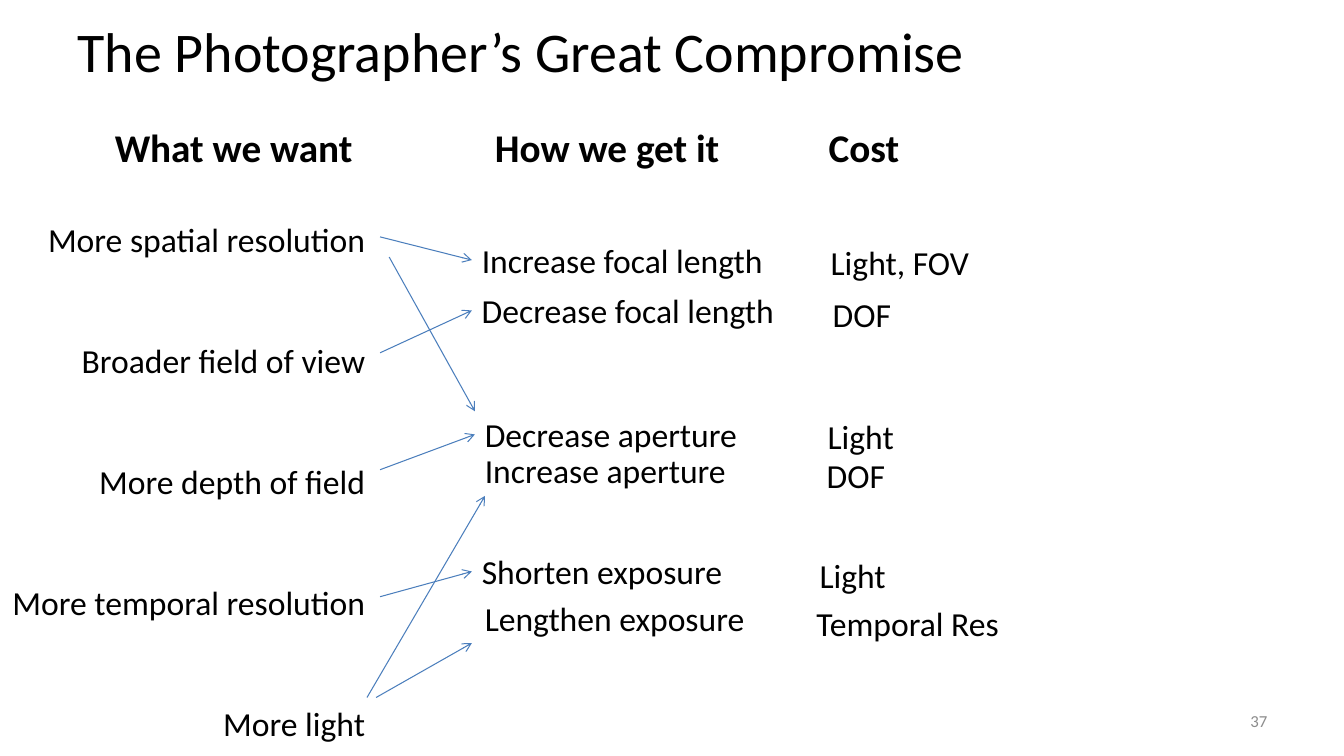
from dataclasses import dataclass

from lxml import etree
from pptx import Presentation
from pptx.dml.color import RGBColor
from pptx.enum import shapes, text
from pptx.oxml import ns
from pptx.util import Inches, Pt


@dataclass(frozen=True)
class Theme:
    """Colours, font and type sizes of the slide."""
    font: str = "Calibri"
    ink: str = "000000"
    muted: str = "8C8C8C"
    arrow: str = "4B7EBC"
    title: int = 40
    heading: int = 28
    body: int = 24
    number: int = 12
    arrow_width: float = 0.75
    want_gap: float = 57.6


THEME = Theme()

HEADINGS = [
    ("What we want", 1.04, 2.7),
    ("How we get it", 4.81, 2.68),
    ("Cost", 8.12, 1.19),
]
WANTS = [
    "More spatial resolution",
    "Broader field of view",
    "More depth of field",
    "More temporal resolution",
    "More light",
]
METHODS = [
    ("Increase focal length", 4.68, 2.33, 3.01),
    ("Decrease focal length", 4.68, 2.83, 3.13),
    ("Decrease aperture", 4.71, 4.06, 2.73),
    ("Increase aperture", 4.71, 4.41, 2.62),
    ("Shorten exposure", 4.68, 5.42, 2.61),
    ("Lengthen exposure", 4.71, 5.88, 2.8),
]
COSTS = [
    ("Light, FOV", 8.14, 2.35, 1.59),
    ("DOF", 8.16, 2.87, 0.79),
    ("Light", 8.11, 4.08, 0.86),
    ("DOF", 8.1, 4.46, 0.79),
    ("Light", 8.03, 5.46, 0.86),
    ("Temporal Res", 8, 5.93, 2.03),
]
ARROWS = [
    (3.77, 2.35, 4.68, 2.58),
    (3.86, 2.55, 4.71, 4.08),
    (3.77, 3.5, 4.68, 3.08),
    (3.77, 4.66, 4.71, 4.31),
    (3.77, 5.92, 4.68, 5.67),
    (3.64, 6.92, 4.81, 4.92),
    (3.73, 6.92, 4.68, 6.38),
]


def style(p, size, color=THEME.ink, bold=False):
    """Format the font of a paragraph."""
    values = {"name": THEME.font, "size": Pt(size), "bold": bold}
    for key, value in values.items():
        setattr(p.font, key, value)
    p.font.color.rgb = RGBColor.from_string(color)


def add_title(s, wording):
    """Place and fill the title placeholder."""
    sp = s.shapes.title
    box = {"left": 0.67, "top": 0, "width": 12, "height": 1}
    for key, value in box.items():
        setattr(sp, key, Inches(value))
    tf = sp.text_frame
    tf.text = wording
    tf.vertical_anchor = text.MSO_ANCHOR.MIDDLE
    p = tf.paragraphs[0]
    p.alignment = text.PP_ALIGN.LEFT
    style(p, THEME.title)


def add_text(s, lines, box, size, align=text.PP_ALIGN.LEFT, gap=0,
             anchor=text.MSO_ANCHOR.TOP, **font):
    """Add a text box with one paragraph per line."""
    tf = s.shapes.add_textbox(*map(Inches, box)).text_frame
    tf.word_wrap = False
    tf.vertical_anchor = anchor
    for i, line in enumerate(lines):
        p = tf.add_paragraph() if i else tf.paragraphs[0]
        p.text = line
        p.alignment = align
        p.space_before = Pt(gap if i else 0)
        style(p, size, **font)


def add_arrow(s, ends):
    """Add a thin line with an open arrowhead at its end."""
    c = s.shapes.add_connector(shapes.MSO_CONNECTOR.STRAIGHT, *map(Inches, ends))
    c.line.color.rgb = RGBColor.from_string(THEME.arrow)
    c.line.width = Pt(THEME.arrow_width)
    etree.SubElement(c.line._get_or_add_ln(), ns.qn("a:tailEnd"), type="arrow")
    etree.SubElement(c._element.spPr, ns.qn("a:effectLst"))


def main():
    """Build and save the slide."""
    prs = Presentation()
    prs.slide_width, prs.slide_height = Inches(13.33), Inches(7.5)
    s = prs.slides.add_slide(prs.slide_layouts[5])
    add_title(s, "The Photographer’s Great Compromise")
    for heading, left, width in HEADINGS:
        add_text(s, [heading], (left, 1.17, width, 0.57), THEME.heading, bold=True)
    add_text(s, WANTS, (0, 2.12, 3.72, 5.34), THEME.body,
             align=text.PP_ALIGN.RIGHT, gap=THEME.want_gap)
    for label, left, top, width in METHODS + COSTS:
        add_text(s, [label], (left, top, width, 0.5), THEME.body)
    for ends in ARROWS:
        add_arrow(s, ends)
    add_text(s, ["37"], (9.56, 6.95, 3.11, 0.4), THEME.number,
             align=text.PP_ALIGN.RIGHT, anchor=text.MSO_ANCHOR.MIDDLE,
             color=THEME.muted)
    prs.save("out.pptx")


if __name__ == "__main__":
    main()
